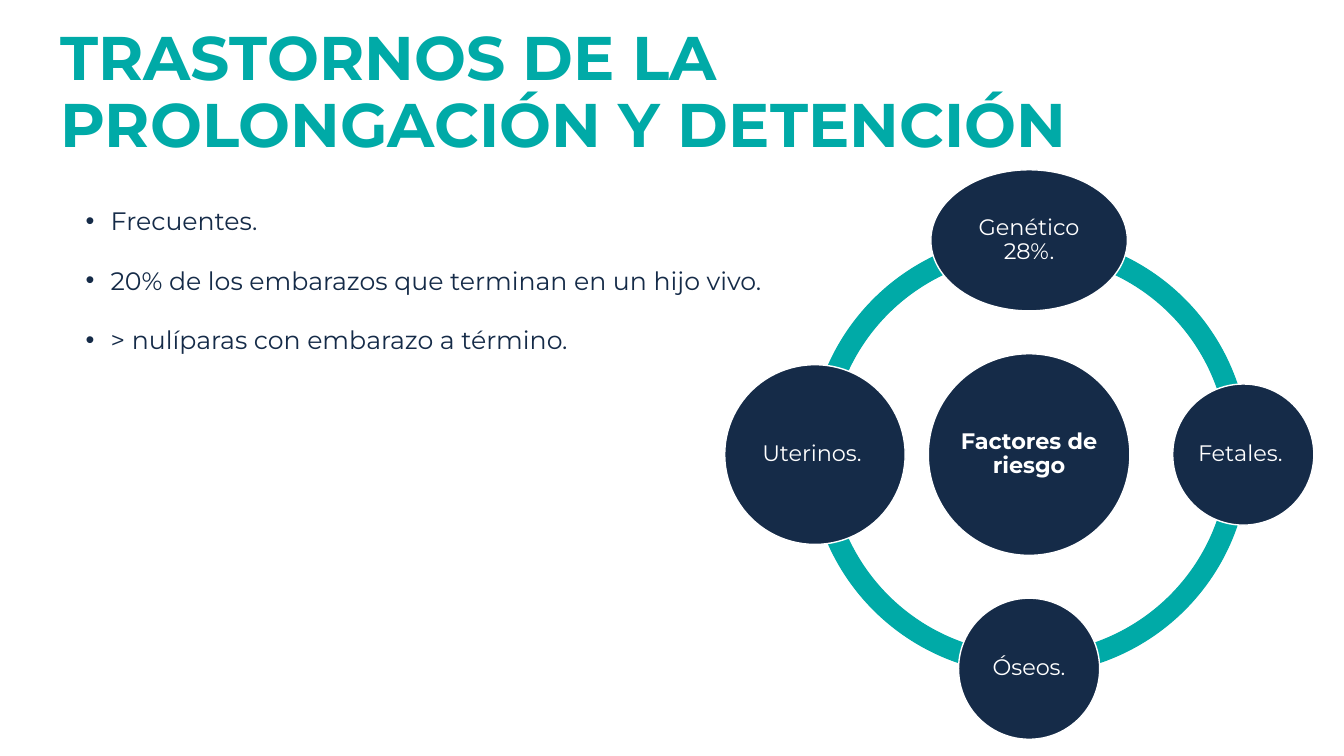
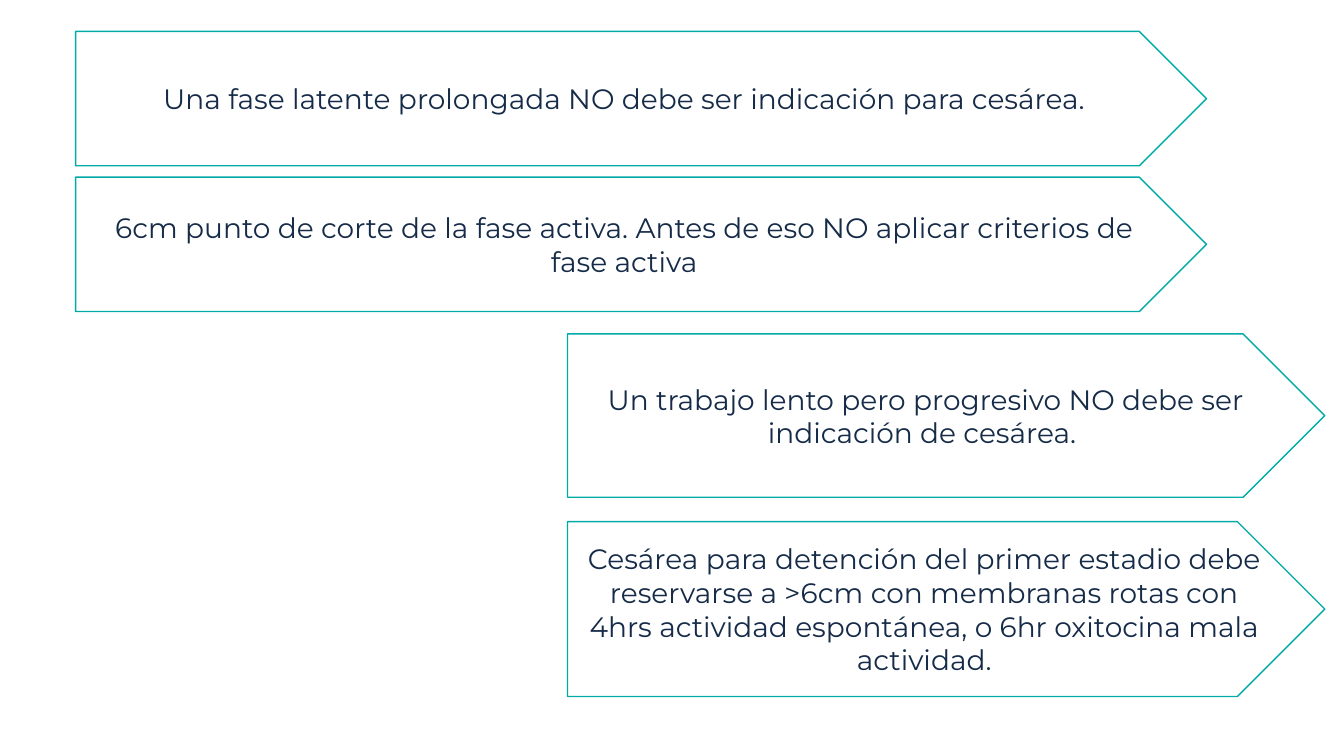
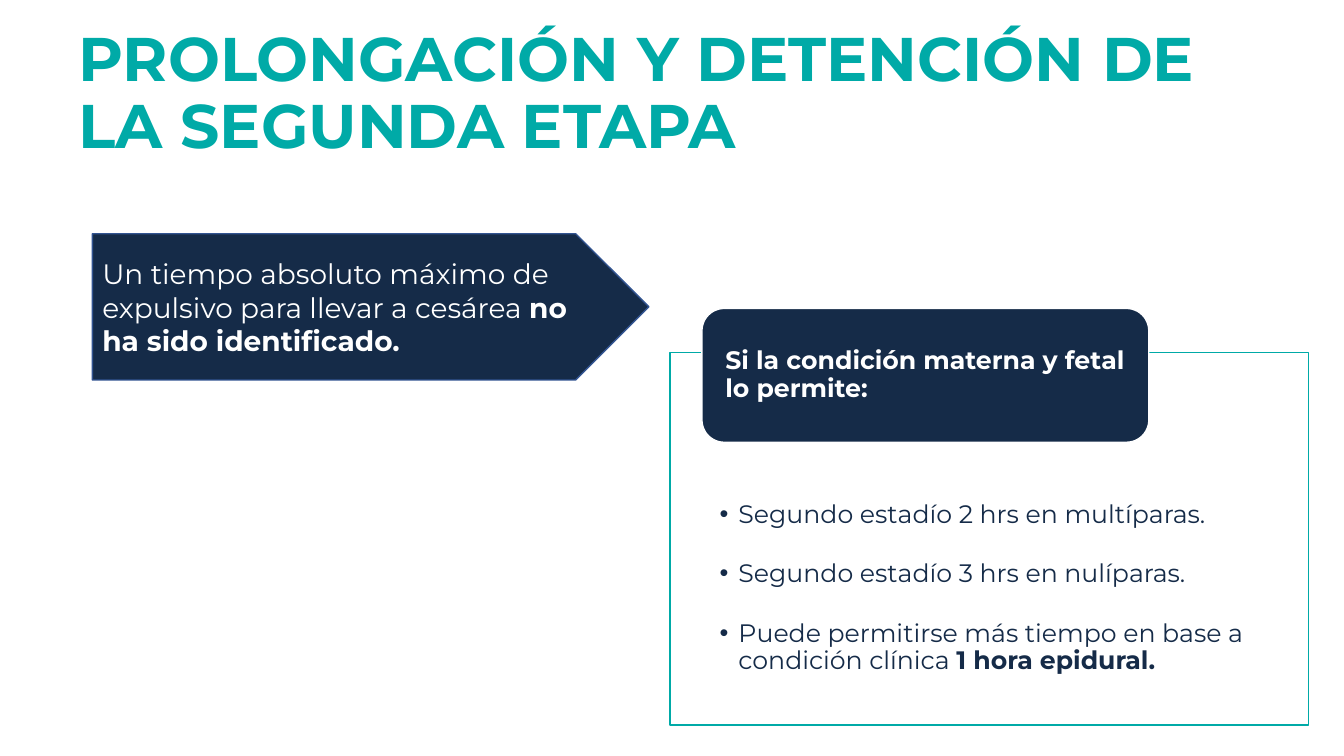
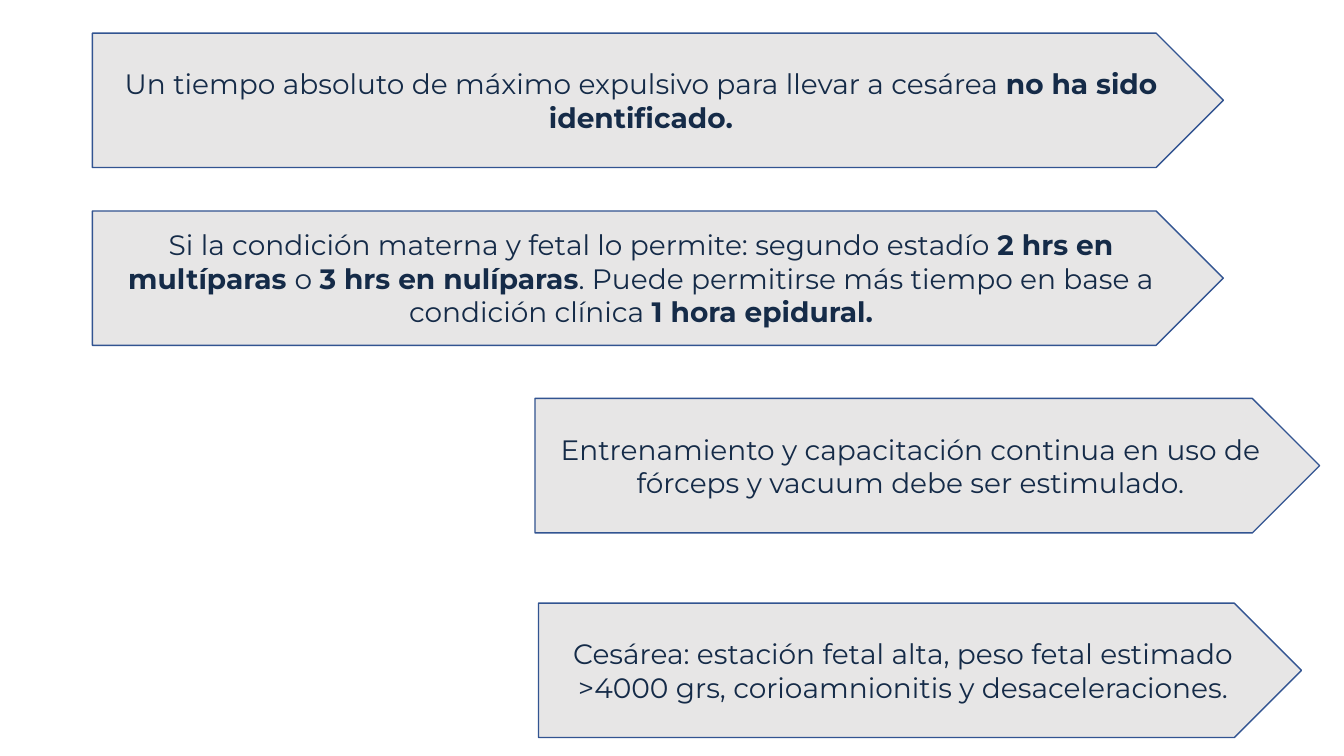
"""Build four slides on prolonged and arrested labour."""
from lxml import etree
from pptx import Presentation
from pptx.dml.color import RGBColor
from pptx.enum.shapes import MSO_SHAPE
from pptx.enum.text import MSO_ANCHOR, PP_ALIGN
from pptx.oxml.ns import qn
from pptx.util import Pt

ARC = MSO_SHAPE.BLOCK_ARC
ELLIPSE = MSO_SHAPE.OVAL
PENTAGON = MSO_SHAPE.PENTAGON
RECTANGLE = MSO_SHAPE.RECTANGLE
ROUNDED = MSO_SHAPE.ROUNDED_RECTANGLE
LEFT, CENTER = PP_ALIGN.LEFT, PP_ALIGN.CENTER
TOP, MIDDLE = MSO_ANCHOR.TOP, MSO_ANCHOR.MIDDLE

FONT = "Montserrat"
TEAL, NAVY, BLUE = "00AAA7", "152B48", "325491"
GRAY, WHITE = "E7E6E6", "FFFFFF"
MARGINS = (7.2, 3.6, 7.2, 3.6)
TIGHT = (1.27, 1.27, 1.27, 1.27)


def add_preset(slide, preset, box, fill, line, width=1):
    """Add a preset shape; a fill of None leaves it empty."""
    shape = slide.shapes.add_shape(preset, *[Pt(value) for value in box])
    shape.shadow.inherit = False
    if fill:
        shape.fill.solid()
        shape.fill.fore_color.rgb = RGBColor.from_string(fill)
    else:
        shape.fill.background()
    shape.line.color.rgb = RGBColor.from_string(line)
    shape.line.width = Pt(width)
    return shape


def write(shape, texts, size, color, bold=False, align=LEFT, anchor=MIDDLE,
          margins=MARGINS, spacing=1.0, gap=0, indent=0):
    """Write paragraphs; ** switches bold and an indent adds bullets."""
    frame = shape.text_frame
    frame.word_wrap = True
    frame.vertical_anchor = anchor
    (frame.margin_left, frame.margin_top,
     frame.margin_right, frame.margin_bottom) = [Pt(value) for value in margins]
    for index, text in enumerate(texts):
        paragraph = frame.add_paragraph() if index else frame.paragraphs[0]
        paragraph.alignment = align
        paragraph.line_spacing = spacing
        if index:
            paragraph.space_before = Pt(gap)
        if indent:
            properties = paragraph._p.get_or_add_pPr()
            properties.set("marL", str(Pt(indent)))
            properties.set("indent", str(-Pt(indent)))
            etree.SubElement(properties, qn("a:buFont")).set("typeface", "Arial")
            etree.SubElement(properties, qn("a:buChar")).set("char", "•")
        for position, part in enumerate(text.split("**")):
            if not part:
                continue
            run = paragraph.add_run()
            run.text = part
            run.font.name = FONT
            run.font.size = Pt(size)
            run.font.bold = bold or position % 2 == 1
            run.font.color.rgb = RGBColor.from_string(color)


presentation = Presentation()
presentation.slide_width = Pt(960)
presentation.slide_height = Pt(540)
blank = presentation.slide_layouts[6]
factors, latent, second_stage, summary = [
    presentation.slides.add_slide(blank) for _ in range(4)]

titles = [
    (factors, (36, 15.1, 858.2, 104.4), "TRASTORNOS DE LA PROLONGACIÓN Y DETENCIÓN"),
    (second_stage, (49, 15.8, 828, 104.4), "PROLONGACIÓN Y DETENCIÓN DE LA SEGUNDA ETAPA"),
]
for slide, box, text in titles:
    title = slide.shapes.add_textbox(*[Pt(value) for value in box])
    write(title, [text], 44, TEAL, bold=True, spacing=0.9)

facts = factors.shapes.add_textbox(Pt(54), Pt(132.5), Pt(562.3), Pt(164.9))
write(facts, [
    "Frecuentes.",
    "20% de los embarazos que terminan en un hijo vivo.",
    "> nulíparas con embarazo a término.",
], 18, NAVY, anchor=TOP, spacing=1.5, gap=10, indent=18)

center_x, center_y, orbit, ring = 735.1, 324.7, 153, 313.9
for start in (108, 54, 0, 162):
    arc = add_preset(factors, ARC, (center_x - ring / 2, center_y - ring / 2, ring, ring),
                     TEAL, TEAL, 0.75)
    arc.adjustments[0] = start
    arc.adjustments[1] = (start + 54) % 216
    arc.adjustments[2] = 0.046

circles = [
    ("**Factores de riesgo**", 0, 0, 144, 144),
    ("Genético 28%.", 0, -1, 140.4, 100.8),
    ("Fetales. ", 1, 0, 100.8, 100.8),
    ("Óseos.", 0, 1, 100.8, 100.8),
    ("Uterinos. ", -1, 0, 128.9, 128.4),
]
for text, step_x, step_y, width, height in circles:
    left = center_x + step_x * orbit - width / 2
    top = center_y + step_y * orbit - height / 2
    circle = add_preset(factors, ELLIPSE, (left, top, width, height), NAVY, WHITE)
    write(circle, [text], 16, WHITE, align=CENTER, margins=TIGHT, spacing=0.9)

arrows = [
    (latent, None, TEAL, [
        ((54, 22.4, 807.8, 96),
         "Una fase latente prolongada NO debe ser indicación para cesárea."),
        ((54, 126.5, 807.8, 96),
         "6cm punto de corte de la fase activa. Antes de eso NO aplicar criterios de "
         "fase activa"),
        ((405.4, 238.5, 540.9, 116.7),
         "Un trabajo lento pero progresivo NO debe ser indicación de cesárea. "),
        ((405.4, 372.6, 540.9, 124.9),
         "Cesárea para detención del primer estadio debe reservarse a >6cm con "
         "membranas rotas con 4hrs actividad espontánea, o 6hr oxitocina mala actividad."),
    ]),
    (summary, GRAY, BLUE, [
        ((66, 23.6, 807.8, 96),
         "Un tiempo absoluto de máximo expulsivo para llevar a cesárea "
         "**no ha sido identificado.**"),
        ((66, 150.7, 807.8, 96),
         "Si la condición materna y fetal lo permite: segundo estadío "
         "**2 hrs en multíparas **o **3 hrs en nulíparas**. Puede permitirse más tiempo "
         "en base a condición clínica **1 hora epidural.**"),
        ((382.1, 284.6, 560.5, 96),
         "Entrenamiento y capacitación continua en uso de fórceps y vacuum debe ser "
         "estimulado."),
        ((384.7, 430.8, 545, 96),
         "Cesárea: estación fetal alta, peso fetal estimado >4000 grs, corioamnionitis "
         "y desaceleraciones."),
    ]),
]
for slide, fill, line, statements in arrows:
    for box, text in statements:
        arrow = add_preset(slide, PENTAGON, box, fill, line)
        write(arrow, [text], 20, NAVY, align=CENTER)

limits = add_preset(second_stage, RECTANGLE, (478.6, 251.8, 456, 266), WHITE, TEAL)
write(limits, [
    "Segundo estadío 2 hrs en multíparas.",
    "Segundo estadío 3 hrs en nulíparas.",
    "Puede permitirse más tiempo en base a condición clínica **1 hora epidural.**",
], 18, NAVY, anchor=TOP, margins=(35.4, 106.6, 35.4, 10), spacing=0.9, gap=23, indent=13.5)

condition = add_preset(second_stage, ROUNDED, (501.4, 220.3, 319.2, 95.6), NAVY, WHITE)
write(condition, ["Si la condición materna y fetal lo permite:"], 18, WHITE, bold=True,
      margins=(12.1, 0, 12.1, 0), spacing=0.9)

expulsion = add_preset(second_stage, PENTAGON, (66, 167, 397.5, 104.4), NAVY, BLUE)
write(expulsion, [
    "Un tiempo absoluto máximo de expulsivo para llevar a cesárea "
    "**no ha sido identificado.**",
], 20, WHITE)

presentation.save("out.pptx")
